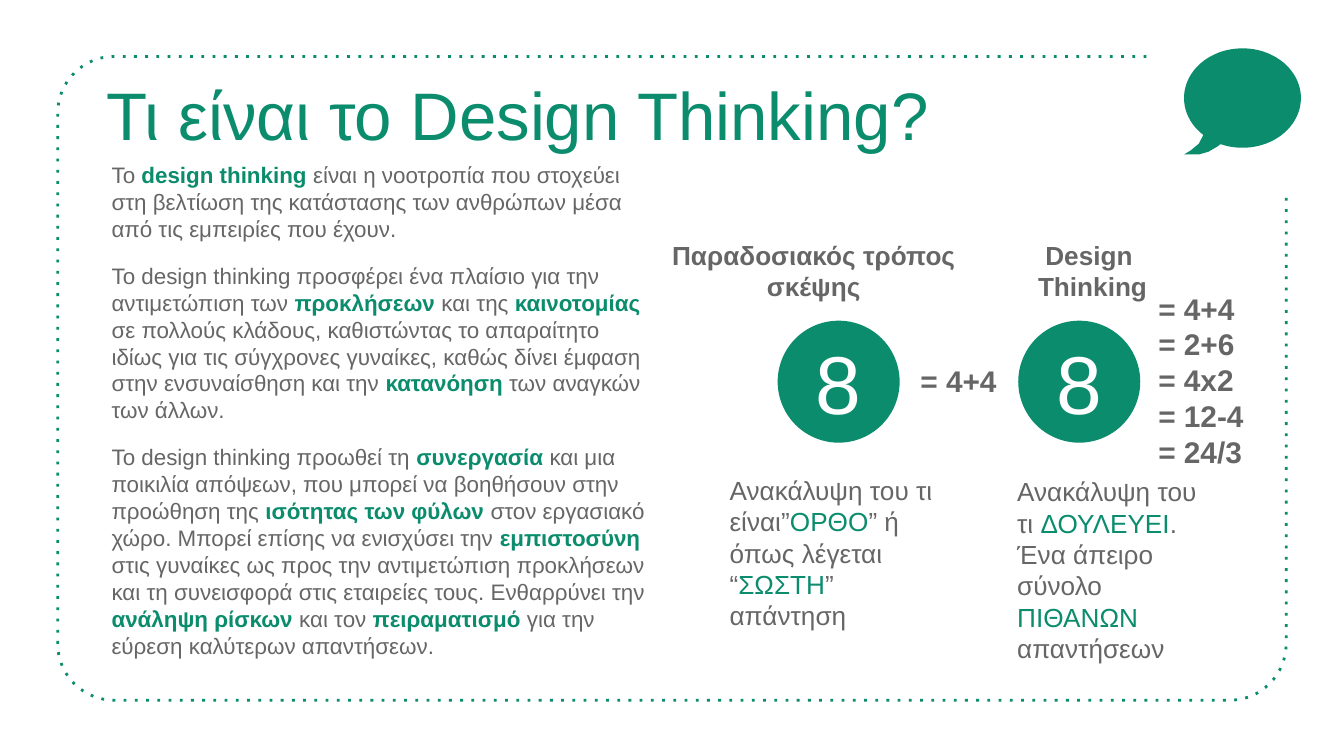
import math

from pptx import Presentation
from pptx.dml.color import RGBColor
from pptx.enum.dml import MSO_LINE
from pptx.enum.shapes import MSO_SHAPE
from pptx.enum.text import MSO_ANCHOR, MSO_AUTO_SIZE, PP_ALIGN
from pptx.oxml.ns import qn
from pptx.util import Pt
from lxml import etree

ELLIPSE = MSO_SHAPE.OVAL
CENTER, LEFT = PP_ALIGN.CENTER, PP_ALIGN.LEFT
TOP, MIDDLE = MSO_ANCHOR.TOP, MSO_ANCHOR.MIDDLE
NO_AUTOFIT = MSO_AUTO_SIZE.NONE
ROUND_DOT = MSO_LINE.ROUND_DOT

EMU_PER_PX = 9144
FONT = "Arial"
GREEN, GREY, WHITE = "0A8C6D", "666666", "FFFFFF"

BODY = [
    "Το *design thinking *είναι η νοοτροπία που στοχεύει στη βελτίωση της "
    "κατάστασης των ανθρώπων μέσα από τις εμπειρίες που έχουν.",
    "Το design thinking προσφέρει ένα πλαίσιο για την αντιμετώπιση των "
    "*προκλήσεων *και της *καινοτομίας *σε πολλούς κλάδους, καθιστώντας το "
    "απαραίτητο ιδίως για τις σύγχρονες γυναίκες, καθώς δίνει έμφαση στην "
    "ενσυναίσθηση και την *κατανόηση *των αναγκών των άλλων.",
    "Το design thinking προωθεί τη *συνεργασία *και μια ποικιλία απόψεων, "
    "που μπορεί να βοηθήσουν στην προώθηση της *ισότητας των φύλων *στον "
    "εργασιακό χώρο. Μπορεί επίσης να ενισχύσει την *εμπιστοσύνη *στις "
    "γυναίκες ως προς την αντιμετώπιση προκλήσεων και τη συνεισφορά στις "
    "εταιρείες τους. Ενθαρρύνει την *ανάληψη ρίσκων *και τον "
    "*πειραματισμό *για την εύρεση καλύτερων απαντήσεων.",
]
LABELS = [
    ("= 4+4\v= 2+6\v= 4x2\v= 12-4\v= 24/3", (852, 211, 89, 145), 16, LEFT, True),
    ("Παραδοσιακός τρόπος σκέψης", (480, 173, 251, 57), 14, CENTER, True),
    ("Design \vThinking", (721, 173, 184, 57), 14, CENTER, True),
    ("= 4+4", (675, 265, 78, 37), 16, LEFT, False),
]
CAPTIONS = [
    ("Ανακάλυψη του τι είναι”*ΟΡΘΟ*” ή όπως λέγεται “*ΣΩΣΤΗ*” απάντηση",
     (533, 348, 188, 128)),
    ("Ανακάλυψη του τι *ΔΟΥΛΕΥΕΙ*. Ένα άπειρο σύνολο *ΠΙΘΑΝΩΝ *απαντήσεων",
     (747, 349, 157, 151)),
]


def px(value):
    return round(value * EMU_PER_PX)


def color(hex_text):
    return RGBColor.from_string(hex_text)


def place(shape, box):
    shape.left, shape.top, shape.width, shape.height = map(px, box)


def format_run(run, size, hex_text, bold=False):
    run.font.name = FONT
    run.font.size = Pt(size)
    run.font.bold = bold
    run.font.color.rgb = color(hex_text)


def format_paragraph(paragraph, size, hex_text, bold=False, align=LEFT):
    paragraph.alignment = align
    for run in paragraph.runs:
        format_run(run, size, hex_text, bold)


def fill_accented(paragraph, text, size, bold_accent):
    for index, part in enumerate(text.split("*")):
        accent = index % 2 == 1
        run = paragraph.add_run()
        run.text = part
        format_run(run, size, GREEN if accent else GREY, accent and bold_accent)


def arc(center, radii, start, end, steps):
    angles = [math.radians(start + (end - start) * step / steps)
              for step in range(steps + 1)]
    return [(center[0] + radii[0] * math.cos(angle),
             center[1] + radii[1] * math.sin(angle)) for angle in angles]


def add_outline(slide, points, close):
    points = [(px(x), px(y)) for x, y in points]
    builder = slide.shapes.build_freeform(*points[0], scale=1.0)
    builder.add_line_segments(points[1:], close=close)
    shape = builder.convert_to_shape()
    shape.shadow.inherit = False
    return shape


def add_dotted_frame(slide):
    points = [(853, 42)]
    for center, start in (((85, 84), 270), ((85, 479), 180), ((915, 479), 90)):
        points += arc(center, (42, 42), start, start - 90, 16)
    frame = add_outline(slide, points + [(957, 146)], False)
    frame.fill.background()
    frame.line.color.rgb = color(GREEN)
    frame.line.width = Pt(1.5)
    frame.line.dash_style = ROUND_DOT
    frame.line._ln.find(qn("a:prstDash")).set("val", "dot")


def add_speech_bubble(slide):
    tail = [(906, 109), (899, 113), (892, 115), (881, 115), (886, 112), (892, 107)]
    oval = arc((924.5, 73), (43.5, 37), 132, 472, 80)
    bubble = add_outline(slide, oval + tail, True)
    bubble.fill.solid()
    bubble.fill.fore_color.rgb = color(GREEN)
    bubble.line.fill.background()


def add_text_box(slide, box, wrap=True):
    text_frame = slide.shapes.add_textbox(*map(px, box)).text_frame
    text_frame.word_wrap = wrap
    return text_frame


def add_label(slide, text, box, size, align, wrap):
    text_frame = add_text_box(slide, box, wrap)
    text_frame.text = text
    format_paragraph(text_frame.paragraphs[0], size, GREY, True, align)


def add_number_circle(slide, left):
    circle = slide.shapes.add_shape(ELLIPSE, *map(px, (left, 240, 88, 88)))
    circle.shadow.inherit = False
    circle.fill.solid()
    circle.fill.fore_color.rgb = color(GREEN)
    circle.line.color.rgb = color(GREEN)
    circle.line.width = Pt(2)
    text_frame = circle.text_frame
    text_frame.vertical_anchor = MIDDLE
    text_frame.text = "8"
    format_paragraph(text_frame.paragraphs[0], 44, WHITE, align=CENTER)


def fill_title(title):
    place(title, (69, 45, 662, 94))
    text_frame = title.text_frame
    text_frame.auto_size = NO_AUTOFIT
    text_frame.vertical_anchor = MIDDLE
    text_frame.margin_left = text_frame.margin_right = px(10)
    text_frame.margin_top, text_frame.margin_bottom = px(10), px(25)
    text_frame.text = "Τι είναι το Design Thinking?"
    format_paragraph(text_frame.paragraphs[0], 36, GREEN)


def fill_body(body):
    place(body, (61, 115, 435, 384))
    text_frame = body.text_frame
    text_frame.auto_size = NO_AUTOFIT
    text_frame.vertical_anchor = TOP
    for index, text in enumerate(BODY):
        paragraph = text_frame.add_paragraph() if index else text_frame.paragraphs[0]
        fill_accented(paragraph, text, 12, True)
        paragraph.alignment = LEFT
        paragraph.space_before = Pt(10.8 if index else 0)
        paragraph.space_after = Pt(0)
        properties = paragraph._p.get_or_add_pPr()
        properties.set("marL", str(px(12)))
        properties.set("indent", "0")
        etree.SubElement(properties, qn("a:buNone"))


def main():
    presentation = Presentation()
    presentation.slide_width = px(1000)
    presentation.slide_height = presentation.slide_width * 9 // 16
    slide = presentation.slides.add_slide(presentation.slide_layouts[1])
    add_dotted_frame(slide)
    fill_title(slide.shapes.title)
    add_speech_bubble(slide)
    for label in LABELS:
        add_label(slide, *label)
    for left in (580, 759):
        add_number_circle(slide, left)
    for text, box in CAPTIONS:
        fill_accented(add_text_box(slide, box).paragraphs[0], text, 14, False)
    fill_body(slide.placeholders[1])
    presentation.save("out.pptx")


if __name__ == "__main__":
    main()
